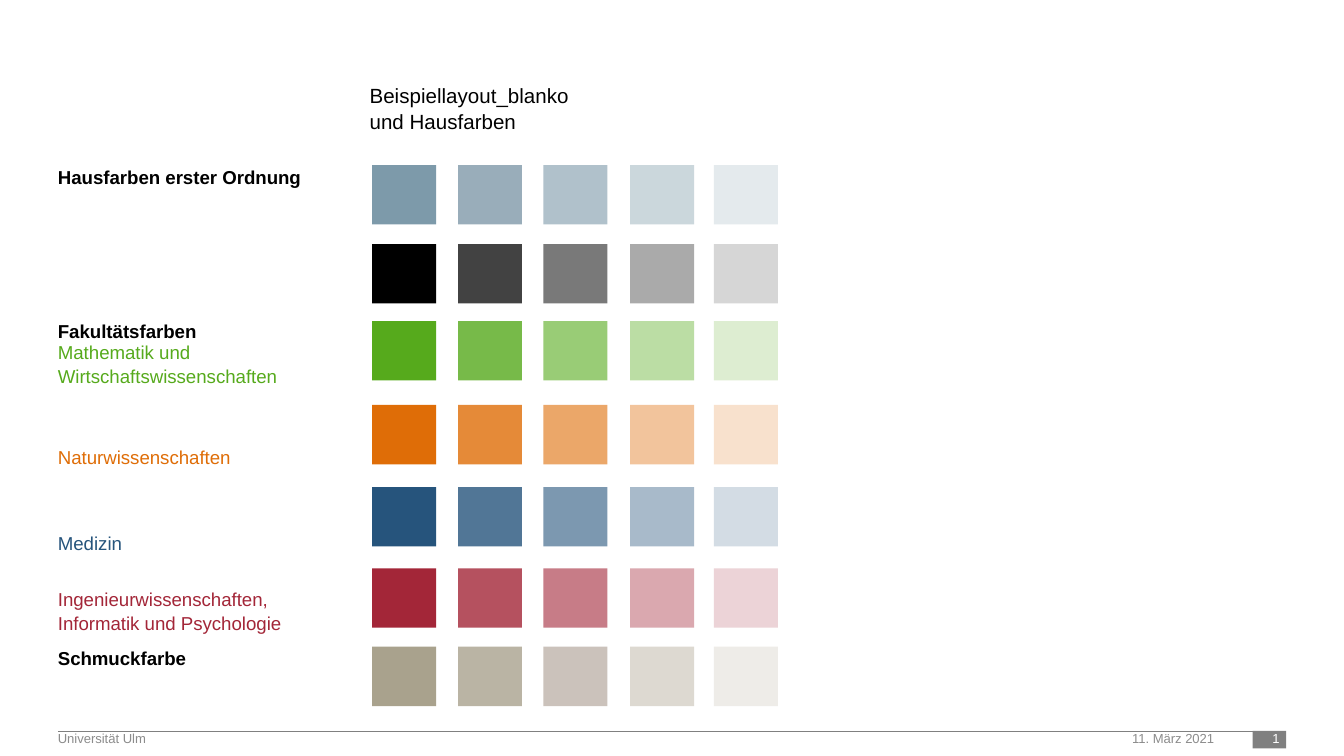
from dataclasses import dataclass

from lxml import etree
from pptx import Presentation
from pptx.dml.color import RGBColor
from pptx.enum import shapes, text
from pptx.oxml import ns
from pptx.util import Pt


@dataclass(frozen=True)
class Theme:
    font: str = "Arial"
    title_size: float = 11
    label_size: float = 10
    footer_size: float = 7
    line_spacing: float = 1.05
    ink: str = "000000"
    paper: str = "FFFFFF"
    rule: str = "808080"
    footer: str = "8C8C8C"
    blue_grey: tuple = ("7D9AAA", "99ADBA", "B0C1CB", "CBD7DC", "E4EAED")
    black: tuple = ("000000", "424242", "797979", "AAAAAA", "D6D6D6")
    green: tuple = ("56AA1C", "77BA49", "99CC76", "BBDDA4", "DDEDD1")
    orange: tuple = ("DF6D07", "E58A38", "EBA769", "F2C49C", "F8E1CD")
    blue: tuple = ("26547C", "517696", "7C98B0", "A8BACA", "D3DCE4")
    red: tuple = ("A32638", "B5515F", "C77C87", "DAA8AF", "ECD3D7")
    sand: tuple = ("A9A28D", "BAB4A4", "CBC2BB", "DDD9D1", "EEECE8")


class SlideBuilder:
    def __init__(self, slide, theme):
        self.slide = slide
        self.theme = theme

    def set_words(self, frame, words, size, color, bold=False, align=text.PP_ALIGN.LEFT, spacing=1.0):
        frame.margin_left = frame.margin_top = frame.margin_right = frame.margin_bottom = 0
        frame.word_wrap = True
        frame.auto_size = text.MSO_AUTO_SIZE.NONE
        frame.vertical_anchor = text.MSO_ANCHOR.TOP
        frame.text = words
        for paragraph in frame.paragraphs:
            paragraph.alignment = align
            paragraph.line_spacing = spacing
            paragraph.space_before = Pt(0)
            for run in paragraph.runs:
                run.font.name = self.theme.font
                run.font.size = Pt(size)
                run.font.bold = bold
                run.font.color.rgb = RGBColor.from_string(color)

    def title(self, words, left, top, width, height):
        heading = self.slide.shapes.title
        heading.left, heading.top = Pt(left), Pt(top)
        heading.width, heading.height = Pt(width), Pt(height)
        self.set_words(heading.text_frame, words, self.theme.title_size, self.theme.ink,
                       spacing=self.theme.line_spacing)

    def textbox(self, words, left, top, width, height, size, color, **style):
        box = self.slide.shapes.add_textbox(Pt(left), Pt(top), Pt(width), Pt(height))
        self.set_words(box.text_frame, words, size, color, **style)

    def label(self, words, top, height, color, bold=False):
        self.textbox(words, 31, top, 137, height, self.theme.label_size, color,
                     bold=bold, spacing=self.theme.line_spacing)

    def rectangle(self, left, top, width, height, color):
        block = self.slide.shapes.add_shape(
            shapes.MSO_SHAPE.RECTANGLE, Pt(left), Pt(top), Pt(width), Pt(height))
        block.shadow.inherit = False
        block.fill.solid()
        block.fill.fore_color.rgb = RGBColor.from_string(color)
        block.line.fill.background()

    def rule(self, left, right, y):
        line = self.slide.shapes.add_connector(
            shapes.MSO_CONNECTOR.STRAIGHT, Pt(left), Pt(y), Pt(right), Pt(y))
        line.line.width = Pt(0.25)
        line.line.color.rgb = RGBColor.from_string(self.theme.rule)
        etree.SubElement(line._element.spPr, ns.qn("a:effectLst"))


def main():
    theme = Theme()
    presentation = Presentation()
    presentation.slide_width, presentation.slide_height = Pt(720), Pt(405)
    slide = presentation.slides.add_slide(presentation.slide_layouts[5])
    page = SlideBuilder(slide, theme)

    page.title("Beispiellayout_blanko\nund Hausfarben", 198, 44, 319, 27)

    columns = (199.4, 245.4, 291.1, 337.6, 382.5)
    palette = (
        (88.5, theme.blue_grey),
        (130.8, theme.black),
        (172, theme.green),
        (217, theme.orange),
        (261, theme.blue),
        (304.5, theme.red),
        (346.5, theme.sand),
    )
    for top, tints in palette:
        for left, tint in zip(columns, tints):
            page.rectangle(left, top, 34.3, 31.8, tint)

    one_line, two_lines = 11, 22
    for heading, top in (
        ("Hausfarben erster Ordnung", 88.5),
        ("Fakultätsfarben", 171),
        ("Schmuckfarbe", 345.8),
    ):
        page.label(heading, top, one_line, theme.ink, bold=True)
    for faculty, top, height, tints in (
        ("Mathematik und Wirtschaftswissenschaften", 182, two_lines, theme.green),
        ("Naturwissenschaften", 238.5, one_line, theme.orange),
        ("Medizin", 284.5, one_line, theme.blue),
        ("Ingenieurwissenschaften, Informatik und Psychologie", 314.5, two_lines, theme.red),
    ):
        page.label(faculty, top, height, tints[0])

    footer_top = 391.5
    page.rectangle(671, footer_top, 18, 9.5, theme.rule)
    page.rule(31, 689, footer_top)
    page.textbox("Universität Ulm", 31, footer_top, 571, 9.5, theme.footer_size, theme.footer)
    page.textbox("11. März 2021", 606.5, footer_top, 64.5, 9.5, theme.footer_size, theme.footer)
    page.textbox("1", 669, footer_top, 16.5, 10.5, theme.footer_size, theme.paper,
                 align=text.PP_ALIGN.RIGHT)

    presentation.save("out.pptx")


if __name__ == "__main__":
    main()
